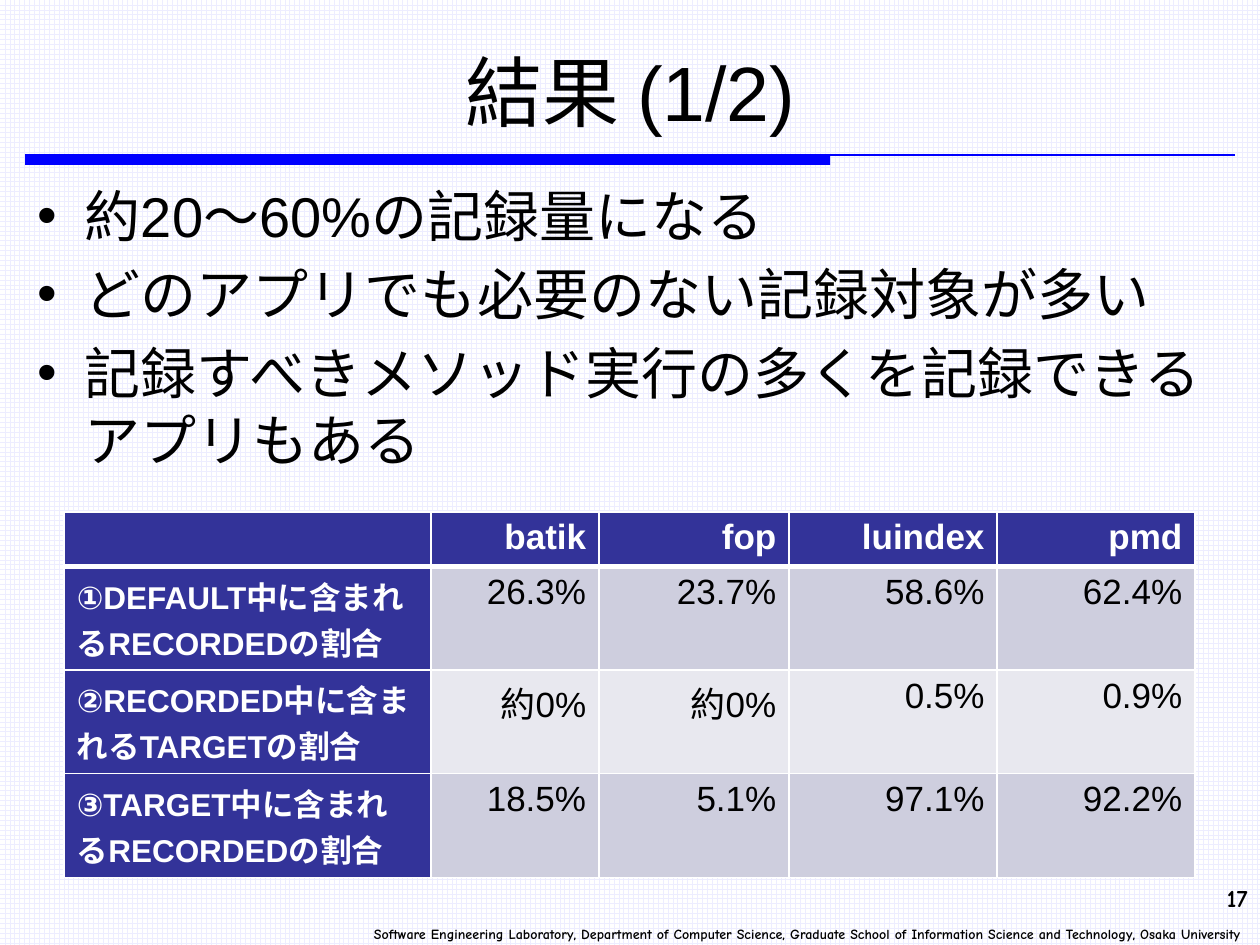
from lxml.etree import SubElement
from pptx import Presentation
from pptx.dml.color import RGBColor
from pptx.enum.dml import MSO_PATTERN
from pptx.enum.shapes import MSO_CONNECTOR, MSO_SHAPE
from pptx.enum.text import MSO_ANCHOR, PP_ALIGN
from pptx.oxml.ns import qn
from pptx.util import Pt

BLUE, NAVY, WHITE, BLACK = "0000FF", "333399", "FFFFFF", "000000"
BANDS = ["CECEDE", "E8E8EF"]
POINTS = [
    "約20～60%の記録量になる",
    "どのアプリでも必要のない記録対象が多い",
    "記録すべきメソッド実行の多くを記録できるアプリもある",
]
RESULTS = [
    ["", "batik", "fop", "luindex", "pmd"],
    ["①DEFAULT中に含まれるRECORDEDの割合", "26.3%", "23.7%", "58.6%", "62.4%"],
    ["②RECORDED中に含まれるTARGETの割合", "約0%", "約0%", "0.5%", "0.9%"],
    ["③TARGET中に含まれるRECORDEDの割合", "18.5%", "5.1%", "97.1%", "92.2%"],
]
COLUMN_WIDTHS = [209.7, 95.8, 108.7, 119, 113]
ROW_HEIGHTS = [29.6] + [59.2] * 3
AFFILIATION = (
    "Software Engineering Laboratory, Department of Computer Science, "
    "Graduate School of Information Science and Technology, Osaka University"
)


def color(hex_code):
    return RGBColor.from_string(hex_code)


def write(paragraph, text, size=20, font="Arial", ink=BLACK, bold=False,
          align=PP_ALIGN.LEFT, before=0, bullet=None, indent=27):
    if bullet:
        properties = paragraph._p.get_or_add_pPr()
        properties.set("marL", str(Pt(indent)))
        properties.set("indent", str(-Pt(indent)))
        SubElement(properties, qn("a:buFont"), typeface=font)
        SubElement(properties, qn("a:buChar"), char=bullet)
    paragraph.alignment = align
    paragraph.space_before = Pt(before)
    if not text:
        return
    run = paragraph.add_run()
    run.text = text
    run.font.name = font
    run.font.size = Pt(size)
    run.font.bold = bold
    run.font.color.rgb = color(ink)


def draw_borders(cell, **widths):
    properties = cell._tc.get_or_add_tcPr()
    for side in "LRTB":
        edge = SubElement(properties, qn(f"a:ln{side}"), w=str(Pt(widths.get(side, 1))))
        SubElement(SubElement(edge, qn("a:solidFill")), qn("a:srgbClr"), val=WHITE)


class ResultSlide:
    def __init__(self, deck):
        self.slide = deck.slides.add_slide(deck.slide_layouts[5])
        self.shapes = self.slide.shapes

    def background(self, grid, paper):
        fill = self.slide.background.fill
        fill.patterned()
        fill.pattern = MSO_PATTERN.LARGE_GRID
        fill.fore_color.rgb = color(grid)
        fill.back_color.rgb = color(paper)

    def title(self, text, left, top, width, height):
        heading = self.shapes.title
        heading.left, heading.top = Pt(left), Pt(top)
        heading.width, heading.height = Pt(width), Pt(height)
        heading.text_frame.vertical_anchor = MSO_ANCHOR.MIDDLE
        write(heading.text_frame.paragraphs[0], text, size=44, align=PP_ALIGN.CENTER)

    def bar(self, left, top, width, height):
        block = self.shapes.add_shape(
            MSO_SHAPE.RECTANGLE, Pt(left), Pt(top), Pt(width), Pt(height))
        block.shadow.inherit = False
        block.fill.solid()
        block.fill.fore_color.rgb = color(BLUE)
        block.line.fill.background()

    def rule(self, left, top, width):
        line = self.shapes.add_connector(
            MSO_CONNECTOR.STRAIGHT, Pt(left), Pt(top), Pt(left + width), Pt(top))
        line.line.color.rgb = color(BLUE)
        line.line.width = Pt(0.75)
        SubElement(line._element.spPr, qn("a:effectLst"))

    def text(self, lines, left, top, width, height, gap=0, **style):
        frame = self.shapes.add_textbox(
            Pt(left), Pt(top), Pt(width), Pt(height)).text_frame
        frame.word_wrap = True
        for index, line in enumerate(lines):
            paragraph = frame.add_paragraph() if index else frame.paragraphs[0]
            write(paragraph, line, before=gap if index else 0, **style)

    def table(self, rows, left, top, widths, heights):
        table = self.shapes.add_table(
            len(rows), len(widths), Pt(left), Pt(top),
            Pt(sum(widths)), Pt(sum(heights))).table
        table.horz_banding = table.first_row = False
        for column, width in zip(table.columns, widths):
            column.width = Pt(width)
        for r, (row, height) in enumerate(zip(rows, heights)):
            table.rows[r].height = Pt(height)
            for c, value in enumerate(row):
                cell = table.cell(r, c)
                heading = r == 0 or c == 0
                draw_borders(cell, T=3 if r == 1 else 1, B=3 if r == 0 else 1)
                cell.fill.solid()
                cell.fill.fore_color.rgb = color(NAVY if heading else BANDS[(r - 1) % 2])
                write(cell.text_frame.paragraphs[0], value,
                      size=20 if c else 18, bold=heading,
                      ink=WHITE if heading else BLACK,
                      align=PP_ALIGN.RIGHT if c else PP_ALIGN.LEFT)


def main():
    deck = Presentation()
    deck.slide_width, deck.slide_height = Pt(720), Pt(540)
    page = ResultSlide(deck)
    page.background("EDEDFF", WHITE)
    page.bar(14.4, 88.5, 460, 5.8)
    page.rule(14.4, 88.5, 691.5)
    small_print = dict(font="Comic Neue", bold=True, align=PP_ALIGN.RIGHT)
    page.text(["17"], 683.3, 501.1, 36.7, 20.2, size=14, **small_print)
    page.text([AFFILIATION], 136, 525.6, 581, 16.6, size=8, **small_print)
    page.title("結果 (1/2)", 14.4, 15.1, 691.9, 73.4)
    page.text(POINTS, 14.4, 100, 691.9, 396.7, gap=6.4, size=32, bullet="•")
    page.table(RESULTS, 36.7, 292.5, COLUMN_WIDTHS, ROW_HEIGHTS)
    deck.save("out.pptx")


if __name__ == "__main__":
    main()
